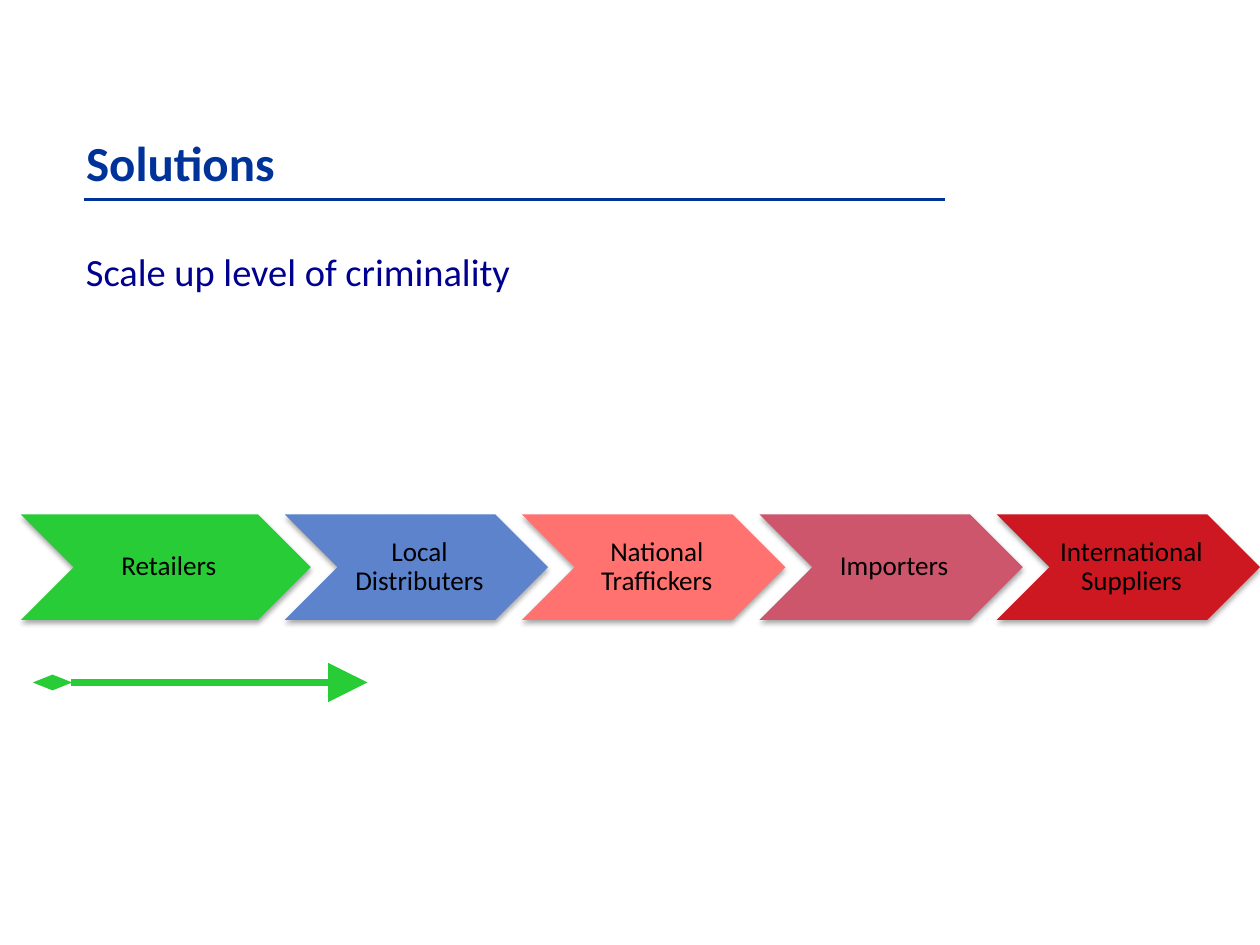
from lxml.etree import SubElement
from pptx import Presentation
from pptx.dml.color import RGBColor
from pptx.enum.shapes import MSO_CONNECTOR, MSO_SHAPE
from pptx.enum.text import MSO_ANCHOR, MSO_AUTO_SIZE, PP_ALIGN
from pptx.oxml import parse_xml
from pptx.oxml.ns import nsdecls, qn
from pptx.util import Pt


def color(value):
    return RGBColor.from_string(value)


def style(paragraph, size, value, bold=False):
    for span in paragraph.runs:
        span.font.name = "Calibri"
        span.font.size = Pt(size)
        span.font.bold = bold
        span.font.color.rgb = color(value)


deck = Presentation()
deck.slide_width, deck.slide_height = Pt(720), Pt(540)
page = deck.slides.add_slide(deck.slide_layouts[5])

title = page.shapes.title
title.left, title.top, title.width, title.height = Pt(42), Pt(72), Pt(516), Pt(41)
frame = title.text_frame
frame.text = "Solutions"
frame.auto_size = MSO_AUTO_SIZE.NONE
frame.vertical_anchor = MSO_ANCHOR.TOP
frame.paragraphs[0].alignment = PP_ALIGN.LEFT
style(frame.paragraphs[0], 28, "003399", bold=True)

subtitle = page.shapes.add_textbox(Pt(42), Pt(138), Pt(267), Pt(34))
subtitle.text_frame.text = "Scale up level of criminality"
style(subtitle.text_frame.paragraphs[0], 22, "000090")

stages = [
    ("Retailers", "28CC37"),
    ("Local Distributers", "5C83CC"),
    ("National Traffickers", "FF726F"),
    ("Importers", "CD566D"),
    ("International Suppliers", "CD1821"),
]
step = 135.6
for index, (label, fill) in enumerate(stages):
    right = 720 - step * (len(stages) - 1 - index)
    width = 165.6 if index == 0 else 150.4
    chevron = page.shapes.add_shape(
        MSO_SHAPE.CHEVRON, Pt(right - width), Pt(294), Pt(width), Pt(60.2))
    chevron.fill.solid()
    chevron.fill.fore_color.rgb = color(fill)
    chevron.line.fill.background()
    chevron._element.spPr.append(parse_xml(
        f'<a:effectLst {nsdecls("a")}>'
        f'<a:outerShdw blurRad="{Pt(3.1)}" dist="{Pt(1.8)}" dir="5400000" rotWithShape="0">'
        '<a:srgbClr val="000000"><a:alpha val="35000"/></a:srgbClr>'
        '</a:outerShdw></a:effectLst>'))
    frame = chevron.text_frame
    frame.text = label
    frame.word_wrap = True
    frame.vertical_anchor = MSO_ANCHOR.MIDDLE
    frame.margin_left = Pt(5)
    frame.margin_right = frame.margin_top = frame.margin_bottom = Pt(1.6)
    paragraph = frame.paragraphs[0]
    paragraph.alignment = PP_ALIGN.CENTER
    paragraph.line_spacing = 0.9
    style(paragraph, 15.5, "000000")

lines = [
    (48, 540, 114, "003399", 2, []),
    (30, 210, 390, "28CC37", 4.5,
     [("headEnd", "diamond", "sm"), ("tailEnd", "triangle", "lg")]),
]
for start, end, top, value, weight, ends in lines:
    line = page.shapes.add_connector(
        MSO_CONNECTOR.STRAIGHT, Pt(start), Pt(top), Pt(end), Pt(top))
    line.line.color.rgb = color(value)
    line.line.width = Pt(weight)
    for tag, kind, size in ends:
        SubElement(line.line._get_or_add_ln(), qn(f"a:{tag}"), type=kind, w=size, len="lg")
    SubElement(line._element.spPr, qn("a:effectLst"))

deck.save("out.pptx")
